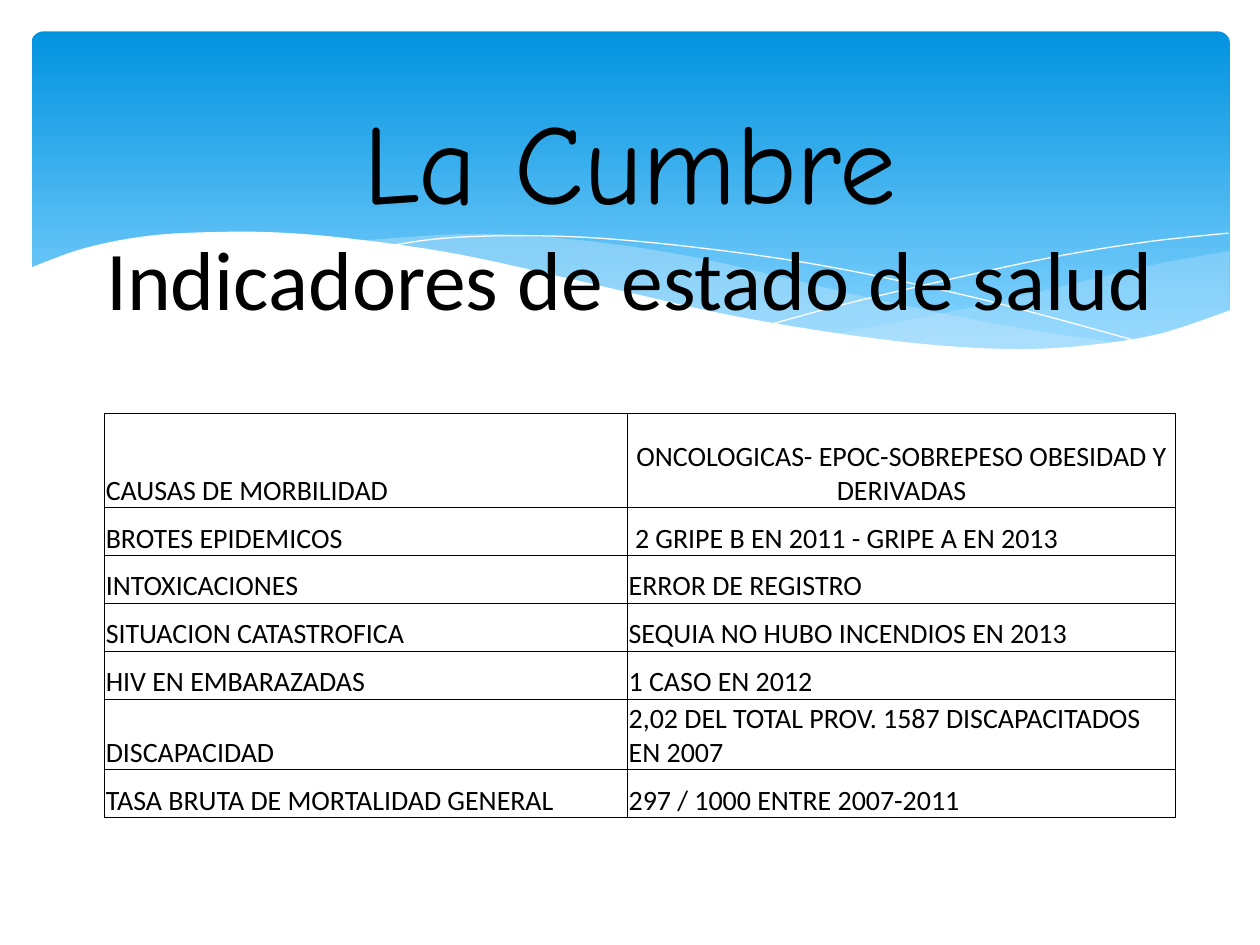
from dataclasses import dataclass
from typing import Any

from lxml import etree
from pptx import Presentation
from pptx.dml.color import RGBColor
from pptx.enum.shapes import MSO_SHAPE
from pptx.enum.text import MSO_ANCHOR, MSO_AUTO_SIZE, PP_ALIGN
from pptx.oxml.ns import qn
from pptx.util import Inches, Pt

ROUND = MSO_SHAPE.ROUNDED_RECTANGLE
TOP, BOTTOM = MSO_ANCHOR.TOP, MSO_ANCHOR.BOTTOM
LEFT, CENTER = PP_ALIGN.LEFT, PP_ALIGN.CENTER
NO_FIT = MSO_AUTO_SIZE.NONE

COLORS = {"deep": "0293E0", "sky": "83D3FE", "mist": "C6E7FC",
          "white": "FFFFFF", "ink": "000000"}
Points = list[tuple[float, float]]


@dataclass
class Wave:
    """Smooth curves joined at corners; without a fill it is a white line."""
    curves: list[Points]
    fill: str = ""
    alpha: int = 100


WAVES = [
    Wave([[(9.76, 1.99), (9.21, 2.09), (8.61, 2.23), (7.79, 2.42),
           (7.06, 2.57), (6.61, 2.65)],
          [(6.61, 2.65), (7.05, 2.71), (7.57, 2.76), (8.14, 2.78),
           (8.63, 2.75), (9.13, 2.67), (9.49, 2.57), (9.76, 2.47)]],
         "mist", 29),
    Wave([[(8.93, 2.73), (8.07, 2.6), (7.06, 2.4), (6.29, 2.22),
           (5.55, 2.05), (4.89, 1.94), (4.2, 1.87), (3.61, 1.86),
           (2.86, 1.91)],
          [(2.86, 1.91), (3.62, 2.03), (4.49, 2.22), (5.3, 2.4),
           (6.18, 2.58), (6.95, 2.7), (7.61, 2.77), (8.18, 2.78),
           (8.93, 2.73)]],
         "mist", 40),
    Wave([[(3.09, 1.95), (3.53, 1.89), (4.16, 1.87), (4.89, 1.9),
           (5.82, 2), (6.65, 2.13), (7.6, 2.33), (8.31, 2.51),
           (9.07, 2.72)]]),
    Wave([[(6.13, 2.57), (6.72, 2.41), (7.48, 2.23), (8.36, 2.04),
           (9.1, 1.92), (9.75, 1.85)]]),
    Wave([[(9.77, 2.46), (9.2, 2.65), (8.63, 2.74), (8.09, 2.77),
           (7.44, 2.74), (6.68, 2.65), (5.79, 2.5), (5.03, 2.33),
           (4.47, 2.2), (3.65, 2.02), (2.92, 1.91), (2.3, 1.85),
           (1.77, 1.84), (1.19, 1.87), (0.67, 1.97), (0.23, 2.13)],
          [(0.23, 3.29), (9.77, 3.29)]],
         "white"),
]

ROWS = [
    ("CAUSAS DE MORBILIDAD",
     "ONCOLOGICAS- EPOC-SOBREPESO OBESIDAD Y DERIVADAS"),
    ("BROTES EPIDEMICOS", " 2 GRIPE B EN 2011 - GRIPE A EN 2013"),
    ("INTOXICACIONES", "ERROR DE REGISTRO"),
    ("SITUACION CATASTROFICA", "SEQUIA NO HUBO INCENDIOS EN 2013"),
    ("HIV EN EMBARAZADAS", "1 CASO EN 2012"),
    ("DISCAPACIDAD", "2,02 DEL TOTAL PROV. 1587 DISCAPACITADOS EN 2007"),
    ("TASA BRUTA DE MORTALIDAD GENERAL", "297 / 1000 ENTRE 2007-2011"),
]
WIDTHS = [4.15, 4.35]
ROW_H = 0.38
TALL = {0: 0.75, 5: 0.56}

TITLE = {"left": Inches(0.5), "top": Inches(0.37),
         "width": Inches(9), "height": Inches(1.37)}
FRAME = {"auto_size": NO_FIT, "word_wrap": True,
         "vertical_anchor": TOP, "margin_top": Inches(0.35)}
HEAD = {"name": "Comic Neue", "size": Pt(64.8), "bold": False}
SUB = {"name": "Calibri", "size": Pt(47.7), "bold": False}
BODY = {"name": "Calibri", "size": Pt(16), "bold": False}
CELL = {"vertical_anchor": BOTTOM, "margin_left": Inches(0.01),
        "margin_right": Inches(0.01), "margin_top": Inches(0.01),
        "margin_bottom": 0}
PLAIN = {"first_row": False, "horz_banding": False}


def rgb(name: str) -> RGBColor:
    return RGBColor.from_string(COLORS[name])


def apply(target: Any, values: dict[str, Any]) -> None:
    for key, value in values.items():
        setattr(target, key, value)


def add_run(para: Any, text: str, style: dict[str, Any]) -> None:
    run = para.add_run()
    run.text = text
    apply(run.font, style)
    run.font.color.rgb = rgb("ink")


def smooth(knots: Points, steps: int = 6) -> Points:
    """Return a Catmull-Rom curve through the knots."""
    if len(knots) < 3:
        return knots
    ends = [knots[0], *knots, knots[-1]]
    curve = [knots[0]]
    for a, b, c, d in zip(ends, ends[1:], ends[2:], ends[3:]):
        for step in range(1, steps + 1):
            t = step / steps
            x, y = (q + t / 2 * (r - p + t * (2 * p - 5 * q + 4 * r - s
                                              + t * (3 * (q - r) + s - p)))
                    for p, q, r, s in zip(a, b, c, d))
            curve.append((x, y))
    return curve


def add_panel(shapes: Any) -> None:
    panel = shapes.add_shape(ROUND, Inches(0.25), Inches(0.25),
                             Inches(9.51), Inches(2.7))
    panel.adjustments[0] = 0.034
    panel.shadow.inherit = False
    panel.line.fill.background()
    panel.fill.gradient()
    panel.fill.gradient_angle = 270
    stops = panel.fill.gradient_stops
    for stop, place, name in zip(stops, (0, 0.9), ("deep", "sky")):
        stop.position = place
        stop.color.rgb = rgb(name)


def add_wave(shapes: Any, wave: Wave) -> None:
    dots = [(Inches(x), Inches(y))
            for curve in wave.curves for x, y in smooth(curve)]
    pen = shapes.build_freeform(*dots[0])
    pen.add_line_segments(dots[1:], close=bool(wave.fill))
    shape = pen.convert_to_shape()
    shape.shadow.inherit = False
    if not wave.fill:
        shape.fill.background()
        shape.line.color.rgb = rgb("white")
        shape.line.width = Pt(0)
        return
    shape.line.fill.background()
    shape.fill.solid()
    shape.fill.fore_color.rgb = rgb(wave.fill)
    if wave.alpha < 100:
        tint = shape._element.spPr.find(qn("a:solidFill"))[0]
        etree.SubElement(tint, qn("a:alpha"), val=str(wave.alpha * 1000))


def add_edges(cell: Any) -> None:
    props = cell._tc.get_or_add_tcPr()
    for side in ("lnL", "lnR", "lnT", "lnB"):
        edge = etree.SubElement(props, qn(f"a:{side}"), w=str(Pt(0.5)))
        fill = etree.SubElement(edge, qn("a:solidFill"))
        etree.SubElement(fill, qn("a:srgbClr"), val=COLORS["ink"])


def add_grid(shapes: Any) -> None:
    highs = [TALL.get(i, ROW_H) for i in range(len(ROWS))]
    grid = shapes.add_table(len(ROWS), len(WIDTHS), Inches(0.83), Inches(3.28),
                            Inches(sum(WIDTHS)), Inches(sum(highs))).table
    apply(grid, PLAIN)
    for col, width in zip(grid.columns, WIDTHS):
        col.width = Inches(width)
    for i, (row, high, texts) in enumerate(zip(grid.rows, highs, ROWS)):
        row.height = Inches(high)
        for j, (cell, text) in enumerate(zip(row.cells, texts)):
            apply(cell, CELL)
            add_edges(cell)
            cell.fill.background()
            para = cell.text_frame.paragraphs[0]
            para.alignment = CENTER if (i, j) == (0, 1) else LEFT
            add_run(para, text, BODY)


def set_title(shapes: Any) -> None:
    title = shapes.title
    apply(title, TITLE)
    apply(title.text_frame, FRAME)
    para = title.text_frame.paragraphs[0]
    para.alignment = CENTER
    add_run(para, "La Cumbre", HEAD)
    para.add_line_break()
    add_run(para, "Indicadores de estado de salud", SUB)
    shapes._spTree.append(title._element)  # bring in front of the waves


def main() -> None:
    deck = Presentation()
    apply(deck, {"slide_width": Inches(10), "slide_height": Inches(7.5)})
    shapes = deck.slides.add_slide(deck.slide_layouts[5]).shapes
    add_panel(shapes)
    for wave in WAVES:
        add_wave(shapes, wave)
    set_title(shapes)
    add_grid(shapes)
    deck.save("out.pptx")


if __name__ == "__main__":
    main()
